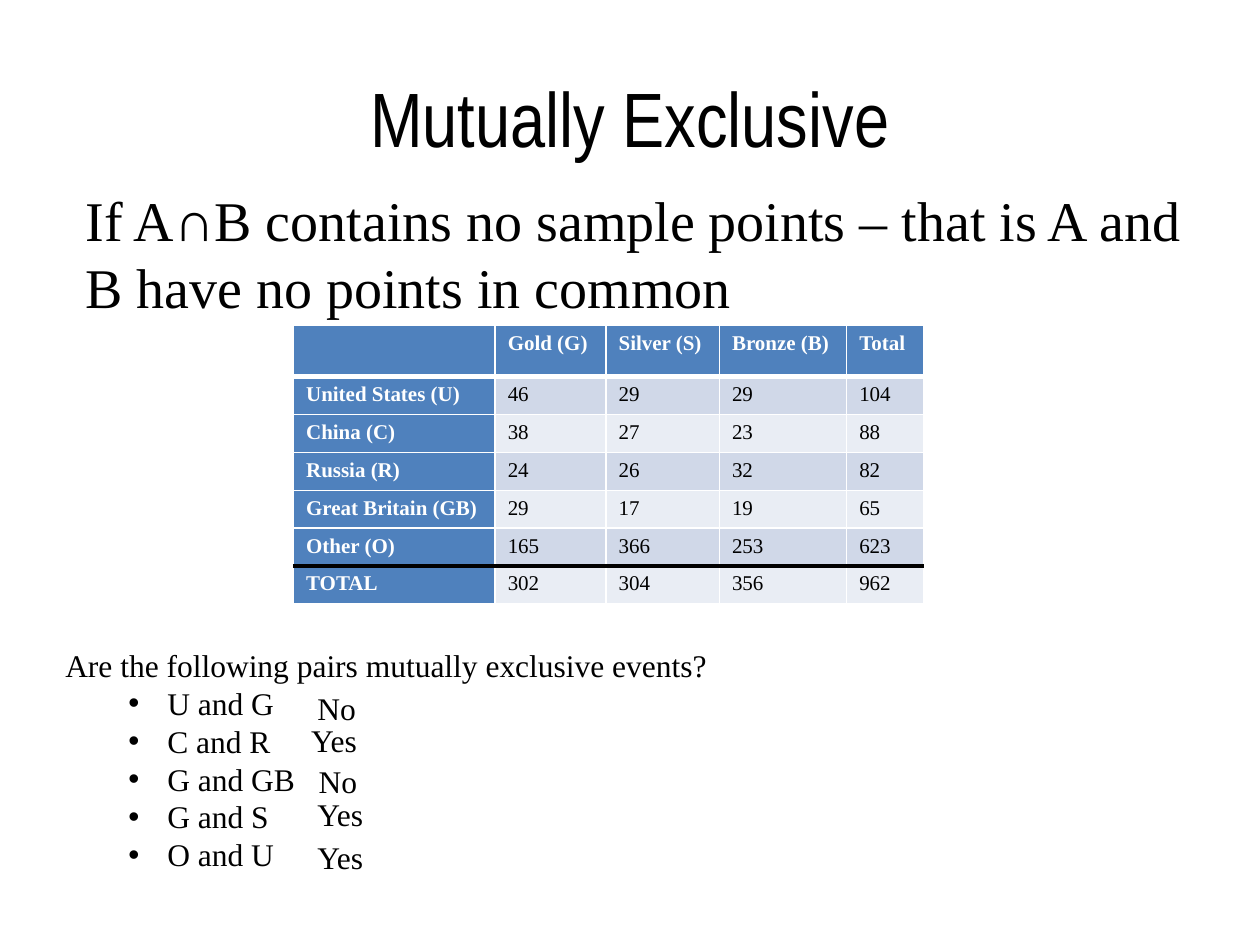
from lxml import etree
from pptx import Presentation
from pptx.dml.color import RGBColor
from pptx.enum import text as enum
from pptx.oxml.ns import qn
from pptx.util import Inches, Pt

COLORS = {"ink": "000000", "paper": "FFFFFF", "head": "4F81BD",
          "odd": "D0D8E8", "even": "E9EDF4"}
SERIF = "Times New Roman"

TITLE = "Mutually Exclusive"
RULE = ("If A∩B contains no sample points – that is A and "
        "B have no points in common")
MEDALS = [
    ["", "Gold (G)", "Silver (S)", "Bronze (B)", "Total"],
    ["United States (U)", "46", "29", "29", "104"],
    ["China (C)", "38", "27", "23", "88"],
    ["Russia (R)", "24", "26", "32", "82"],
    ["Great Britain (GB)", "29", "17", "19", "65"],
    ["Other (O)", "165", "366", "253", "623"],
    ["TOTAL", "302", "304", "356", "962"],
]
WIDTHS = [1.6, 0.88, 0.9, 1.01, 0.61]
HEIGHTS = [0.41] + [0.29] * 6
ASK = "Are the following pairs mutually exclusive events?"
PAIRS = ["U and G", "C and R", "G and GB", "G and S", "O and U"]
REPLIES = [("No", 2.42, 5.42), ("Yes", 2.37, 5.67), ("No", 2.43, 6),
           ("Yes", 2.42, 6.26), ("Yes", 2.42, 6.6)]


def style(par, size, face=SERIF, color="ink", bold=False):
    looks = {"size": Pt(size), "name": face, "bold": bold}
    for run in par.runs:
        for key, value in looks.items():
            setattr(run.font, key, value)
        run.font.color.rgb = RGBColor.from_string(COLORS[color])


def write(slide, box, lines, size, face=SERIF):
    shape = slide.shapes.add_textbox(*map(Inches, box))
    frame = shape.text_frame
    frame.word_wrap = True
    frame.text = "\n".join(lines)
    for par in frame.paragraphs:
        style(par, size, face)
    return frame


def bullet(par):
    props = par._p.get_or_add_pPr()
    props.set("lvl", "1")
    props.set("marL", str(Inches(0.81)))
    props.set("indent", str(Inches(-0.31)))
    etree.SubElement(props, qn("a:buFont"), typeface="Arial")
    etree.SubElement(props, qn("a:buChar"), char="•")


def border(cell, sides):
    """Draw cell edges; sides maps L, R, T, B to (color, points)."""
    props = cell._tc.get_or_add_tcPr()
    for spot, (side, (color, width)) in enumerate(sides.items()):
        line = etree.Element(qn("a:ln" + side), w=str(Pt(width)))
        fill = etree.SubElement(line, qn("a:solidFill"))
        etree.SubElement(fill, qn("a:srgbClr"), val=COLORS[color])
        props.insert(spot, line)


def medals(slide):
    rows, cols = len(MEDALS), len(WIDTHS)
    table = slide.shapes.add_table(
        rows, cols, Inches(2.33), Inches(2.58),
        Inches(sum(WIDTHS)), Inches(sum(HEIGHTS))).table
    for col, width in zip(table.columns, WIDTHS):
        col.width = Inches(width)
    for row, height in zip(table.rows, HEIGHTS):
        row.height = Inches(height)

    thin = ("paper", 1)
    edges = {1: ("paper", 3), rows - 1: ("ink", 3)}
    for r, row in enumerate(MEDALS):
        for c, label in enumerate(row):
            cell = table.cell(r, c)
            head = r == 0 or c == 0
            tone = "head" if head else "odd" if r % 2 else "even"
            cell.fill.solid()
            cell.fill.fore_color.rgb = RGBColor.from_string(COLORS[tone])
            cell.text = label
            par = cell.text_frame.paragraphs[0]
            par.font.size = Pt(12)
            style(par, 12, color="paper" if head else "ink", bold=head)
            border(cell, {"L": thin, "R": thin, "T": edges.get(r, thin),
                          "B": edges.get(r + 1, thin)})


def main():
    deck = Presentation()
    deck.slide_width, deck.slide_height = Inches(10), Inches(7.5)
    slide = deck.slides.add_slide(deck.slide_layouts[6])

    title = write(slide, (0.5, 0.3, 9, 1.25), [TITLE], 44, "Arial Narrow")
    title.vertical_anchor = enum.MSO_ANCHOR.MIDDLE
    title.paragraphs[0].alignment = enum.PP_ALIGN.CENTER

    rule = write(slide, (0.58, 1.42, 9, 1.33), [RULE], 32)
    rule.paragraphs[0].space_before = Pt(6.4)

    medals(slide)

    quiz = write(slide, (0.42, 5.08, 5.5, 1.92), [ASK] + PAIRS, 18)
    for par in quiz.paragraphs[1:]:
        bullet(par)
    for reply, left, top in REPLIES:
        write(slide, (left, top, 0.58, 0.4), [reply], 18)

    deck.save("out.pptx")


if __name__ == "__main__":
    main()
